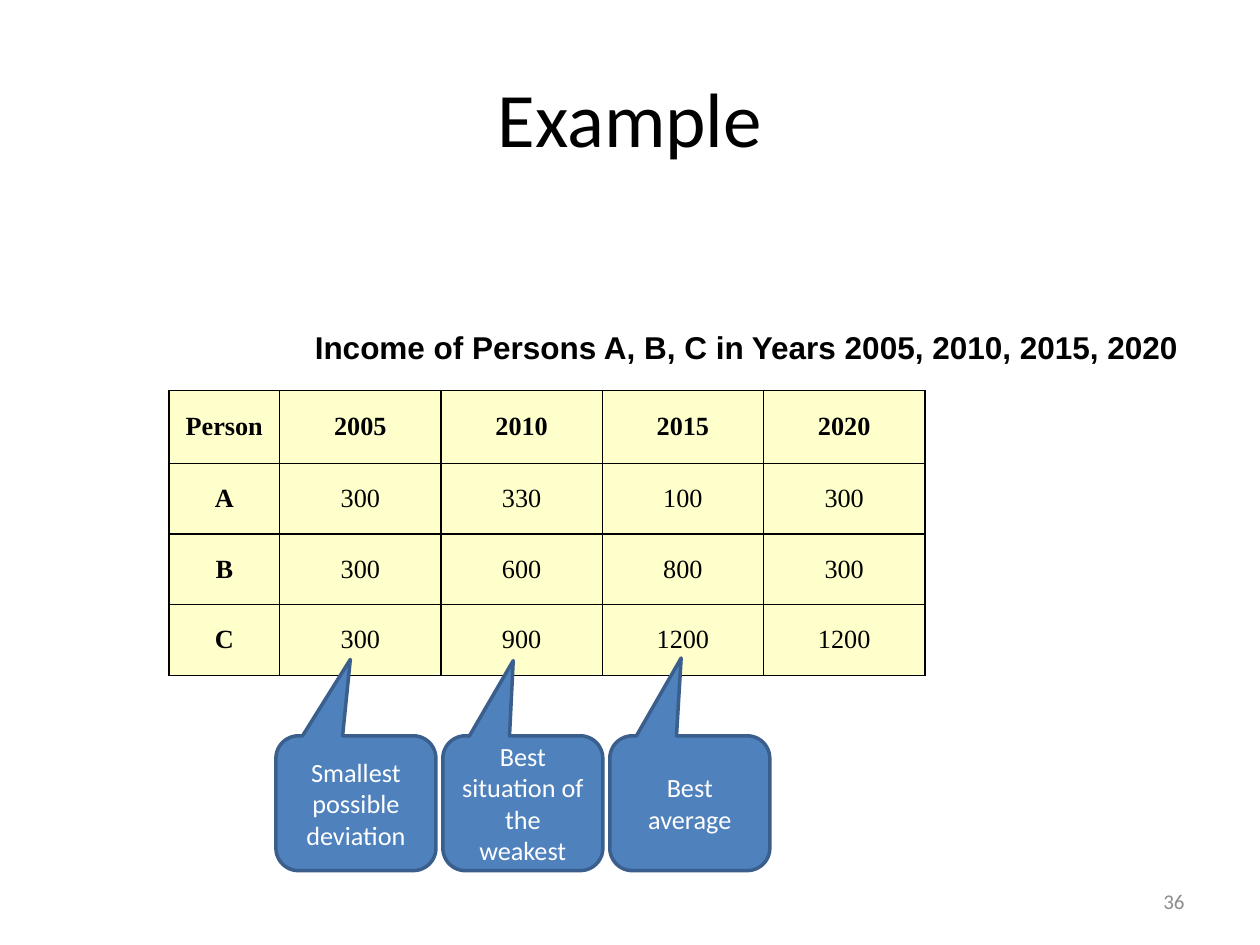
from dataclasses import dataclass

from lxml import etree
from pptx import Presentation
from pptx.dml.color import RGBColor
from pptx.enum.shapes import MSO_SHAPE
from pptx.enum.text import MSO_ANCHOR, PP_ALIGN
from pptx.oxml.ns import qn
from pptx.util import Inches, Pt

CALLOUT = MSO_SHAPE.ROUNDED_RECTANGULAR_CALLOUT
MIDDLE = MSO_ANCHOR.MIDDLE
LEFT, CENTER, RIGHT = PP_ALIGN.LEFT, PP_ALIGN.CENTER, PP_ALIGN.RIGHT
BLANK_LAYOUT = 6


@dataclass(frozen=True)
class Theme:
    black: str = "000000"
    white: str = "FFFFFF"
    gray: str = "8C8C8C"
    cell_fill: str = "FFFFCC"
    callout_fill: str = "4F81BD"
    callout_line: str = "3A5F8C"
    body_font: str = "Calibri"
    caption_font: str = "Arial"
    table_font: str = "Times New Roman"
    title_size: int = 44
    caption_size: int = 18
    body_size: int = 15
    number_size: int = 12


THEME = Theme()

INCOMES = [
    ["Person", "2005", "2010", "2015", "2020"],
    ["A", "300", "330", "100", "300"],
    ["B", "300", "600", "800", "300"],
    ["C", "300", "900", "1200", "1200"],
]
COLUMN_WIDTHS = [0.88] + [1.28] * 4
ROW_HEIGHTS = [0.58] + [0.56] * 3

# Text and pointer tip, the tip relative to the callout's centre and size
CALLOUTS = [
    ("Smallest possible deviation", -0.035, -1.067),
    ("Best situation of the weakest", -0.06, -1.058),
    ("Best average", -0.054, -1.077),
]


def set_text(text_frame, text, size, font=THEME.body_font, color=THEME.black,
             bold=False, alignment=CENTER):
    text_frame.text = text
    paragraph = text_frame.paragraphs[0]
    paragraph.alignment = alignment
    run_font = paragraph.runs[0].font
    run_font.name = font
    run_font.size = Pt(size)
    run_font.bold = bold
    run_font.color.rgb = RGBColor.from_string(color)


def add_text(slide, text, box, size, wrap=True, **text_format):
    shape = slide.shapes.add_textbox(*map(Inches, box))
    shape.text_frame.word_wrap = wrap
    shape.text_frame.vertical_anchor = MIDDLE
    set_text(shape.text_frame, text, size, **text_format)


def add_cell_borders(cell):
    """Put a 1 pt line on all four sides, ahead of the fill as the schema asks."""
    properties = cell._tc.get_or_add_tcPr()
    for index, side in enumerate(("lnL", "lnR", "lnT", "lnB")):
        line = etree.Element(qn(f"a:{side}"), w=str(Pt(1)))
        fill = etree.SubElement(line, qn("a:solidFill"))
        etree.SubElement(fill, qn("a:srgbClr"), val=THEME.black)
        properties.insert(index, line)


def format_cell(cell, text, bold):
    cell.fill.solid()
    cell.fill.fore_color.rgb = RGBColor.from_string(THEME.cell_fill)
    cell.vertical_anchor = MIDDLE
    cell.margin_left = cell.margin_right = Inches(0.07)
    cell.margin_top = cell.margin_bottom = Inches(0.04)
    set_text(cell.text_frame, text, THEME.body_size, THEME.table_font, bold=bold)
    add_cell_borders(cell)


def add_income_table(slide, left, top):
    table = slide.shapes.add_table(
        len(ROW_HEIGHTS), len(COLUMN_WIDTHS), Inches(left), Inches(top),
        Inches(sum(COLUMN_WIDTHS)), Inches(sum(ROW_HEIGHTS))).table
    for column, width in zip(table.columns, COLUMN_WIDTHS):
        column.width = Inches(width)
    for row, height in zip(table.rows, ROW_HEIGHTS):
        row.height = Inches(height)
    for row_index, values in enumerate(INCOMES):
        for column_index, value in enumerate(values):
            is_heading = row_index == 0 or column_index == 0
            format_cell(table.cell(row_index, column_index), value, is_heading)


def add_callout(slide, text, left, tip_x, tip_y):
    shape = slide.shapes.add_shape(
        CALLOUT, Inches(left), Inches(5.84), Inches(1.27), Inches(1.07))
    shape.adjustments[0] = tip_x
    shape.adjustments[1] = tip_y
    shape.shadow.inherit = False
    shape.fill.solid()
    shape.fill.fore_color.rgb = RGBColor.from_string(THEME.callout_fill)
    shape.line.color.rgb = RGBColor.from_string(THEME.callout_line)
    shape.line.width = Pt(2)
    shape.text_frame.word_wrap = True
    shape.text_frame.vertical_anchor = MIDDLE
    set_text(shape.text_frame, text, THEME.body_size, color=THEME.white)


def main():
    presentation = Presentation()
    presentation.slide_width = Inches(10)
    presentation.slide_height = Inches(7.5)
    slide = presentation.slides.add_slide(presentation.slide_layouts[BLANK_LAYOUT])

    add_text(slide, "Example", (0.5, 0.3, 9, 1.25), THEME.title_size)
    add_text(slide, "Income of Persons A, B, C in Years 2005, 2010, 2015, 2020",
             (2.4, 2.55, 7.12, 0.4), THEME.caption_size, wrap=False,
             font=THEME.caption_font, bold=True, alignment=LEFT)
    add_income_table(slide, 1.34, 3.1)
    for index, (text, tip_x, tip_y) in enumerate(CALLOUTS):
        add_callout(slide, text, 2.19 + index * 1.325, tip_x, tip_y)
    add_text(slide, "36", (7.17, 6.95, 2.33, 0.4), THEME.number_size,
             color=THEME.gray, alignment=RIGHT)

    presentation.save("out.pptx")


if __name__ == "__main__":
    main()
